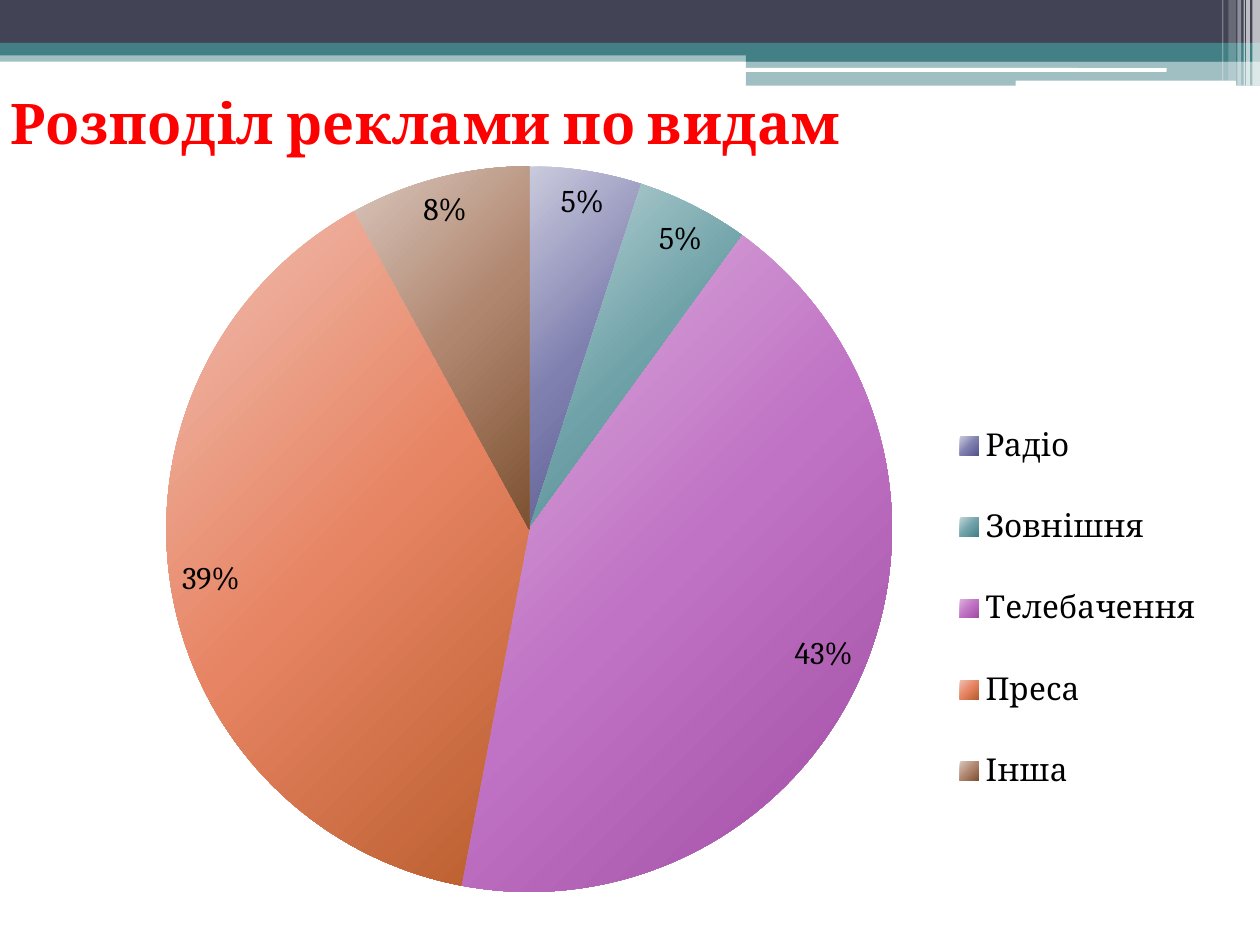
from dataclasses import dataclass

from lxml import etree
from pptx import Presentation
from pptx.chart.data import CategoryChartData
from pptx.dml.color import RGBColor
from pptx.enum.chart import XL_CHART_TYPE as ChartType
from pptx.enum.chart import XL_LABEL_POSITION as LabelPosition
from pptx.enum.chart import XL_LEGEND_POSITION as LegendPosition
from pptx.enum.shapes import MSO_SHAPE as Preset
from pptx.oxml import parse_xml
from pptx.oxml.ns import qn
from pptx.util import Inches, Pt


@dataclass(frozen=True)
class Theme:
    font: str = "Cambria"
    title_size: int = 32
    body_size: int = 18
    navy: str = "424456"
    teal: str = "438086"
    white: str = "FFFFFF"
    black: str = "000000"
    red: str = "FF0000"


THEME = Theme()

# Category, percent, then light, middle and dark slice colours
SLICES = [
    ("Радіо", 5, ("CACADD", "8080B0", "53548A")),
    ("Зовнішня", 5, ("BFD6D8", "70A3A9", "438086")),
    ("Телебачення", 43, ("DDB2DE", "C072C4", "A04DA3")),
    ("Преса", 39, ("F0BFB2", "E78463", "B85D2C")),
    ("Інша", 8, ("D9C6BC", "B0866F", "7D5232")),
]


def add_bar(slide, left, top, width, height, color, opacity=100, preset=Preset.RECTANGLE):
    bar = slide.shapes.add_shape(preset, Inches(left), Inches(top), Inches(width), Inches(height))
    bar.shadow.inherit = False
    bar.line.fill.background()
    bar.fill.solid()
    bar.fill.fore_color.rgb = RGBColor.from_string(color)
    if opacity < 100:
        color_element = bar.fill._xPr.find(".//" + qn("a:srgbClr"))
        etree.SubElement(color_element, qn("a:alpha")).set("val", str(opacity * 1000))


def add_header(slide, left, top, width):
    # Full-width bands
    add_bar(slide, left, top + 0.4, width, 0.09, THEME.teal, 50)
    add_bar(slide, left, top, width, 0.34, THEME.navy)
    add_bar(slide, left, top + 0.34, width, 0.1, THEME.teal)

    # Step on the right with two white slots
    right = left + width
    add_bar(slide, right - 4.08, top + 0.39, 4.08, 0.1, THEME.teal)
    add_bar(slide, right - 4.08, top + 0.48, 4.08, 0.2, THEME.teal, 50)
    for offset, drop, length, height in [(4.09, 0.54, 3.35, 0.03), (1.94, 0.64, 1.75, 0.05)]:
        add_bar(slide, right - offset, top + drop, length, height, THEME.white,
                preset=Preset.ROUNDED_RECTANGLE)

    # Translucent vertical stripes: offset from right, width, height, opacity
    stripes = [(0.06, 0.06, 0.68, 65), (0.11, 0.03, 0.68, 65), (0.13, 0.01, 0.68, 60),
               (0.18, 0.03, 0.68, 40), (0.25, 0.06, 0.64, 20), (0.3, 0.01, 0.64, 30)]
    for offset, stripe_width, height, opacity in stripes:
        add_bar(slide, right - offset, top, stripe_width, height, THEME.white, opacity)


def style_font(font, size, color, bold=False):
    font.name = THEME.font
    font.size = Pt(size)
    font.bold = bold
    font.color.rgb = RGBColor.from_string(color)


def set_layout(parent, before, chart_size, left, top, width=None, height=None, inner=False):
    """Place a chart part, in inches within the chart, ahead of the named sibling."""
    for old in parent.findall(qn("c:layout")):
        parent.remove(old)
    layout = etree.Element(qn("c:layout"))
    manual = etree.SubElement(layout, qn("c:manualLayout"))
    modes = [("layoutTarget", "inner")] if inner else []
    for name, value in modes + [("xMode", "edge"), ("yMode", "edge")]:
        etree.SubElement(manual, qn("c:" + name)).set("val", value)
    for name, length, whole in zip("xywh", (left, top, width, height), chart_size * 2):
        if length is not None:
            etree.SubElement(manual, qn("c:" + name)).set("val", str(length / whole))
    parent.find(qn(before)).addprevious(layout)


def fill_gradient(point, colors):
    point.format.line.fill.background()
    properties = point.format.line._get_or_add_ln().getparent()
    stops = "".join(
        f'<a:gs pos="{position}"><a:srgbClr val="{color}"/></a:gs>'
        for position, color in zip((0, 50000, 100000), colors))
    properties.insert(0, parse_xml(
        '<a:gradFill xmlns:a="http://schemas.openxmlformats.org/drawingml/2006/main" '
        f'rotWithShape="1"><a:gsLst>{stops}</a:gsLst><a:lin ang="2700000" scaled="0"/></a:gradFill>'))


def add_pie(slide, left, top, width, height):
    size = (width, height)
    data = CategoryChartData()
    data.categories = [name for name, _, _ in SLICES]
    data.add_series("Series 1", [value for _, value, _ in SLICES])
    chart = slide.shapes.add_chart(ChartType.PIE, Inches(left), Inches(top),
                                   Inches(width), Inches(height), data).chart
    style_font(chart.font, THEME.body_size, THEME.black)

    # Title
    chart.has_title = True
    run = chart.chart_title.text_frame.paragraphs[0].add_run()
    run.text = "Розподіл реклами по видам"
    style_font(run.font, THEME.title_size, THEME.red, bold=True)
    chart.chart_title.include_in_layout = False
    set_layout(chart.chart_title._element, "c:overlay", size, 0, 0.61)

    # Slices and percentages
    plot = chart.plots[0]
    plot.vary_by_categories = True
    for index, (_, _, colors) in enumerate(SLICES):
        fill_gradient(plot.series[0].points[index], colors)
    plot.has_data_labels = True
    labels = plot.data_labels
    labels.show_percentage = True
    labels.show_value = False
    labels.number_format = "0%"
    labels.number_format_is_linked = False
    labels.position = LabelPosition.BEST_FIT
    style_font(labels.font, THEME.body_size, THEME.black)
    set_layout(plot._element.getparent(), "c:pieChart", size, 1.32, 1.32, 5.76, 5.76, inner=True)

    # Legend
    chart.has_legend = True
    legend = chart.legend
    legend.position = LegendPosition.RIGHT
    legend.include_in_layout = False
    style_font(legend.font, THEME.body_size, THEME.black)
    set_layout(legend._element, "c:overlay", size, 7.32, 3.04, 2.46, 3.58)


def main():
    presentation = Presentation()
    presentation.slide_width = Inches(10)
    presentation.slide_height = Inches(7.5)
    slide = presentation.slides.add_slide(presentation.slide_layouts[6])
    add_header(slide, 0, 0, 10)
    add_pie(slide, 0, 0, 10, 7.5)
    presentation.save("out.pptx")


if __name__ == "__main__":
    main()
